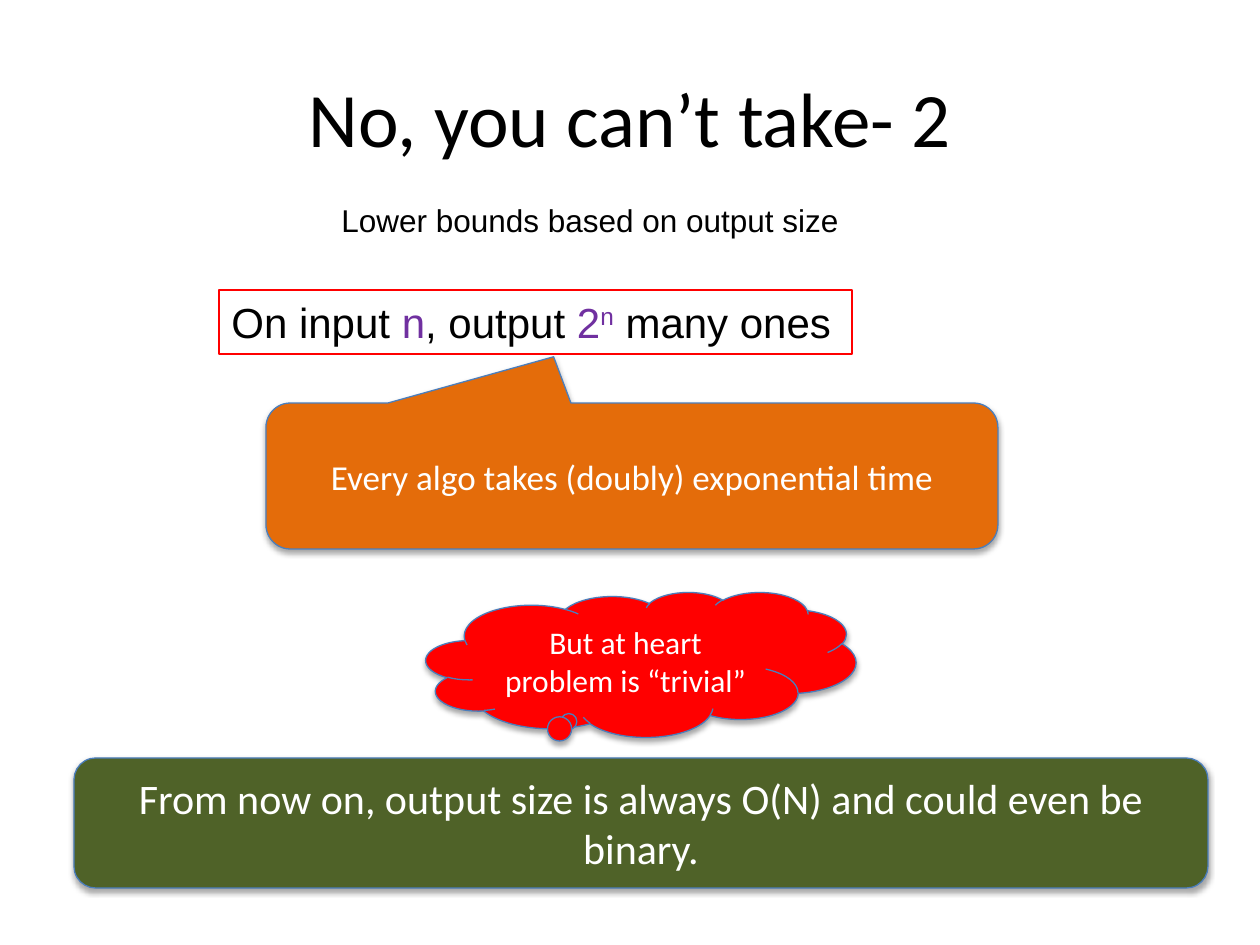
"""Build a slide on lower bounds that follow from output size."""
from dataclasses import dataclass

from lxml.etree import SubElement
from pptx import Presentation
from pptx.dml.color import RGBColor as Rgb
from pptx.enum.shapes import MSO_SHAPE as Kind
from pptx.enum.text import MSO_ANCHOR as Anchor, MSO_AUTO_SIZE as Fit, PP_ALIGN as Align
from pptx.oxml.ns import qn
from pptx.util import Emu, Pt

SCALE = 914400 / 126


def px(num):
    return Emu(round(num * SCALE))


@dataclass(frozen=True)
class Theme:
    head: str = "Calibri"
    body: str = "Arial"
    black: str = "000000"
    white: str = "FFFFFF"
    violet: str = "7030A0"
    red: str = "FF0000"
    orange: str = "E46C0A"
    green: str = "4F6228"
    edge: str = "4B7EBC"
    title: int = 44
    large: int = 24
    mid: int = 20
    small: int = 18
    line: float = 0.75


class Deck:
    def __init__(self, theme, wide, high):
        self.theme = theme
        self.file = Presentation()
        self.file.slide_width, self.file.slide_height = px(wide), px(high)
        self.slide = self.file.slides.add_slide(self.file.slide_layouts[6])

    def style(self, para, face, size, color, align):
        para.alignment = align
        font = para.font
        font.name, font.size = face, Pt(size)
        font.color.rgb = Rgb.from_string(color)

    def text(self, box, words, face, size, align=Align.LEFT, wrap=False):
        shape = self.slide.shapes.add_textbox(*map(px, box))
        frame = shape.text_frame
        frame.word_wrap = wrap
        frame.auto_size = Fit.NONE if wrap else Fit.SHAPE_TO_FIT_TEXT
        frame.vertical_anchor = Anchor.MIDDLE if wrap else Anchor.TOP
        para = frame.paragraphs[0]
        self.style(para, face, size, self.theme.black, align)
        for part, color, base in words:
            run = para.add_run()
            run.text = part
            if color:
                run.font.color.rgb = Rgb.from_string(color)
            if base:
                run.font._element.set("baseline", str(base * 1000))
        return shape

    def border(self, shape, color):
        shape.line.color.rgb = Rgb.from_string(color)
        shape.line.width = Pt(self.theme.line)

    def shade(self, shape):
        shape.shadow.inherit = False
        glow = shape._element.spPr.find(qn("a:effectLst"))
        drop = SubElement(glow, qn("a:outerShdw"), blurRad="40000",
                          dist="23000", dir="5400000", rotWithShape="0")
        tint = SubElement(drop, qn("a:srgbClr"), val=self.theme.black)
        SubElement(tint, qn("a:alpha"), val="35000")

    def bubble(self, kind, box, words, fill, size, adjust=()):
        shape = self.slide.shapes.add_shape(kind, *map(px, box))
        for spot, value in enumerate(adjust):
            shape.adjustments[spot] = value
        shape.fill.solid()
        shape.fill.fore_color.rgb = Rgb.from_string(fill)
        self.border(shape, self.theme.edge)
        self.shade(shape)
        frame = shape.text_frame
        frame.word_wrap = True
        frame.vertical_anchor = Anchor.MIDDLE
        para = frame.paragraphs[0]
        para.text = words
        self.style(para, self.theme.head, size, self.theme.white, Align.CENTER)

    def save(self):
        self.file.save("out.pptx")


def main():
    look = Theme()
    deck = Deck(look, 1260, 945)
    deck.text((63, 38, 1134, 157), [("No, you can’t take- 2", None, 0)],
              look.head, look.title, Align.CENTER, True)
    deck.text((329, 195, 528, 50), [("Lower bounds based on output size", None, 0)],
              look.body, look.small)
    claim = [("On input ", None, 0), ("n", look.violet, 0), (", output ", None, 0),
             ("2", look.violet, 0), ("n", look.violet, 30), (" many ones", None, 0)]
    frame = deck.text((219, 290, 633, 64), claim, look.body, look.large)
    deck.border(frame, look.red)
    deck.bubble(Kind.ROUNDED_RECTANGULAR_CALLOUT, (266, 403, 732, 146),
                "Every algo takes (doubly) exponential time",
                look.orange, look.mid, (-0.107, -0.817, 0.167))
    deck.bubble(Kind.CLOUD_CALLOUT, (426, 592, 430, 145),
                "But at heart problem is “trivial”",
                look.red, look.small, (-0.161, 0.378))
    deck.bubble(Kind.ROUNDED_RECTANGLE, (74, 758, 1134, 130),
                "From now on, output size is always O(N) and could even be binary.",
                look.green, look.large)
    deck.save()


if __name__ == "__main__":
    main()
